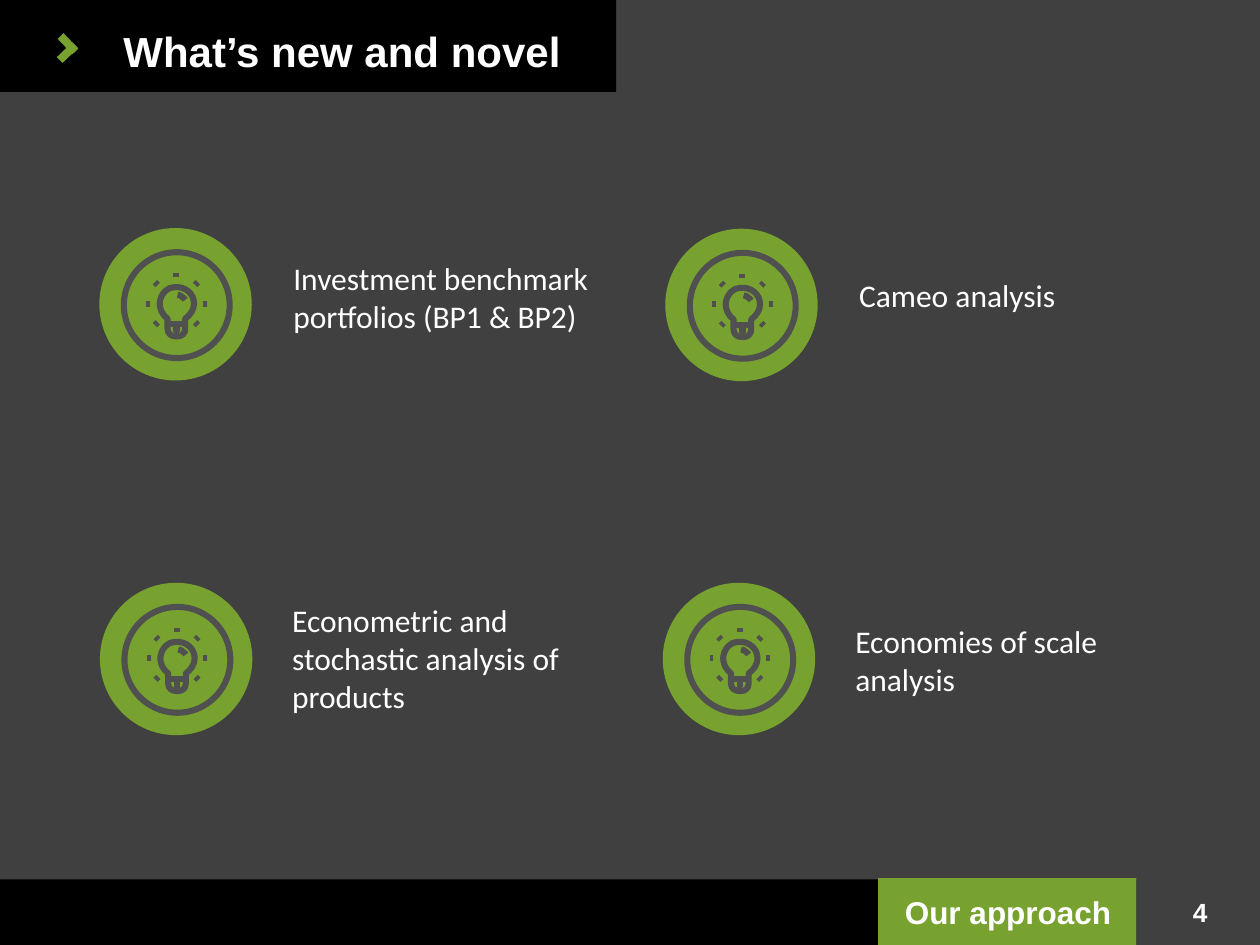
import math

import pptx
import pptx.dml.color
import pptx.enum.shapes
import pptx.enum.text
import pptx.oxml.ns
import pptx.util
from lxml import etree

RGBColor = pptx.dml.color.RGBColor
BACKGROUND = RGBColor(0x40, 0x40, 0x40)
BLACK = RGBColor(0, 0, 0)
WHITE = RGBColor(0xFF, 0xFF, 0xFF)
GREEN = RGBColor(0x78, 0xA2, 0x2F)
GREY = RGBColor(0x50, 0x50, 0x50)
SHAPE = pptx.enum.shapes.MSO_SHAPE
ALIGN = pptx.enum.text.PP_ALIGN
ANCHOR = pptx.enum.text.MSO_ANCHOR

deck = pptx.Presentation()
deck.slide_width = pptx.util.Inches(10)
deck.slide_height = pptx.util.Inches(7.5)
UNIT = deck.slide_width / 100  # square grid: 100 columns by 75 rows


def grid(*cells):
    return [pptx.util.Emu(round(cell * UNIT)) for cell in cells]


def write(box, text, font="Calibri", size=18, bold=False, align=ALIGN.LEFT,
          anchor=ANCHOR.TOP, insets=(1, 0.5, 1, 0.5), wrap=True, spacing=None):
    frame = box.text_frame
    frame.auto_size = pptx.enum.text.MSO_AUTO_SIZE.NONE
    frame.word_wrap = wrap
    frame.vertical_anchor = anchor
    (frame.margin_left, frame.margin_top,
     frame.margin_right, frame.margin_bottom) = grid(*insets)
    para = frame.paragraphs[0]
    para.alignment = align
    para.line_spacing = spacing
    span = para.add_run()
    span.text = text
    span.font.name = font
    span.font.size = pptx.util.Pt(size)
    span.font.bold = bold
    span.font.color.rgb = WHITE


page = deck.slides.add_slide(deck.slide_layouts[5])
page.background.fill.solid()
page.background.fill.fore_color.rgb = BACKGROUND

# Title bar
title = page.shapes.title
title.left, title.top, title.width, title.height = grid(0, 0, 48.9, 7.3)
title.fill.solid()
title.fill.fore_color.rgb = BLACK
write(title, "What’s new and novel", font="Arial", size=24, bold=True,
      insets=(9.8, 1.6, 3.9, 1.6), wrap=False, spacing=pptx.util.Pt(32))

# Title chevron, footer bar and section tag
for cells, turn, color in [
    ((4.5, 3.85, 1.7, 0.65), 316.1, GREEN),
    ((4.55, 3.15, 1.7, 0.65), 46.1, GREEN),
    ((0, 69.8, 90.2, 5.2), 0, BLACK),
    ((69.7, 69.7, 20.5, 5.4), 0, GREEN),
]:
    bar = page.shapes.add_shape(SHAPE.RECTANGLE, *grid(*cells))
    bar.rotation = turn
    bar.shadow.inherit = False
    bar.fill.solid()
    bar.fill.fore_color.rgb = color
    bar.line.fill.background()
write(bar, "Our approach", font="Arial", bold=True, align=ALIGN.RIGHT,
      insets=(2, 1.2, 2, 1.2), wrap=False)

# Page number
number = page.shapes.add_textbox(*grid(90.9, 70.4, 8.7, 4))
write(number, "4", font="Arial", size=15, bold=True, align=ALIGN.CENTER,
      anchor=ANCHOR.MIDDLE, insets=(1, 0, 1, 0))

# Captions
for text, cells in [
    ("Investment benchmark portfolios (BP1 & BP2)", (22.3, 20.1, 26.6, 7.1)),
    ("Cameo analysis", (67.2, 21.4, 25.4, 4)),
    ("Econometric and stochastic analysis of products", (22.2, 47.2, 25.4, 10.1)),
    ("Economies of scale analysis", (66.9, 48.9, 25.4, 7.1)),
]:
    write(page.shapes.add_textbox(*grid(*cells)), text)

# Bulb curves around the icon centre: a start, then Bezier triples
GLINT = [(0.1, -0.7), (0.3, -0.7), (0.4, -0.6), (0.5, -0.5),
         (0.6, -0.5), (0.6, -0.4), (0.7, -0.3)]
BULB = [(1.4, 0), (1.4, -0.8), (0.7, -1.4), (-0.2, -1.3),
        (-0.7, -1.3), (-1.2, -0.8), (-1.3, -0.2),
        (-1.4, 0.4), (-1.1, 0.9), (-0.7, 1.2),
        (-0.7, 2), (-0.7, 2), (-0.7, 2),
        (-0.7, 2.4), (-0.4, 2.6), (0, 2.6),
        (0.1, 2.6), (0.1, 2.6), (0.1, 2.6),
        (0.4, 2.6), (0.7, 2.4), (0.7, 2),
        (0.7, 1.2), (0.7, 1.2), (0.7, 1.2),
        (1.1, 0.9), (1.4, 0.5), (1.4, 0)]

# Socket threads, and rays in every direction but down
strokes = [(-0.65, 1.65, 0.7, 1.65), (-0.25, 2, 0.25, 2), (-0.2, 2.3, 0.2, 2.3)]
for angle in range(135, 406, 45):
    x, y = math.cos(math.radians(angle)), math.sin(math.radians(angle))
    strokes.append((2.1 * x, 2.1 * y, 2.4 * x, 2.4 * y))

# Icons
DISC, RING = 12.1, 8.4
for left, top in [(7.88, 18.1), (52.8, 18.15), (52.6, 46.25), (7.93, 46.25)]:
    icon = page.shapes.add_group_shape().shapes
    disc = icon.add_shape(SHAPE.OVAL, *grid(left, top, DISC, DISC))
    disc.shadow.inherit = False
    disc.fill.solid()
    disc.fill.fore_color.rgb = GREEN
    disc.line.fill.background()

    center_x, center_y = left + 6.12, top + 6
    outlines = [icon.add_shape(SHAPE.OVAL, *grid(left + 1.95, top + 1.92, RING, RING))]
    for knots in (GLINT, BULB):
        places = [grid(center_x + x, center_y + y) for x, y in knots]
        builder = icon.build_freeform(*places[0], scale=1.0)
        builder.add_line_segments(places[1:], close=knots is BULB)
        outline = builder.convert_to_shape()
        # Join each three straight segments into one Bezier curve
        segments = list(outline.element.iter(pptx.oxml.ns.qn("a:lnTo")))
        for start in range(0, len(knots) - 1, 3):
            curve = etree.Element(pptx.oxml.ns.qn("a:cubicBezTo"))
            segments[start].addprevious(curve)
            for segment in segments[start:start + 3]:
                curve.append(segment[0])
                segment.getparent().remove(segment)
        outlines.append(outline)
    for outline in outlines:
        outline.shadow.inherit = False
        outline.fill.background()

    for x1, y1, x2, y2 in strokes:
        stroke = icon.add_connector(
            pptx.enum.shapes.MSO_CONNECTOR.STRAIGHT,
            *grid(center_x + x1, center_y + y1, center_x + x2, center_y + y2))
        outlines.append(stroke)
    for outline in outlines:
        outline.line.color.rgb = GREY
        outline.line.width = pptx.util.Pt(3.5)
    for stroke in outlines[-len(strokes):]:
        etree.SubElement(stroke.element.spPr, pptx.oxml.ns.qn("a:effectLst"))

deck.save("out.pptx")
